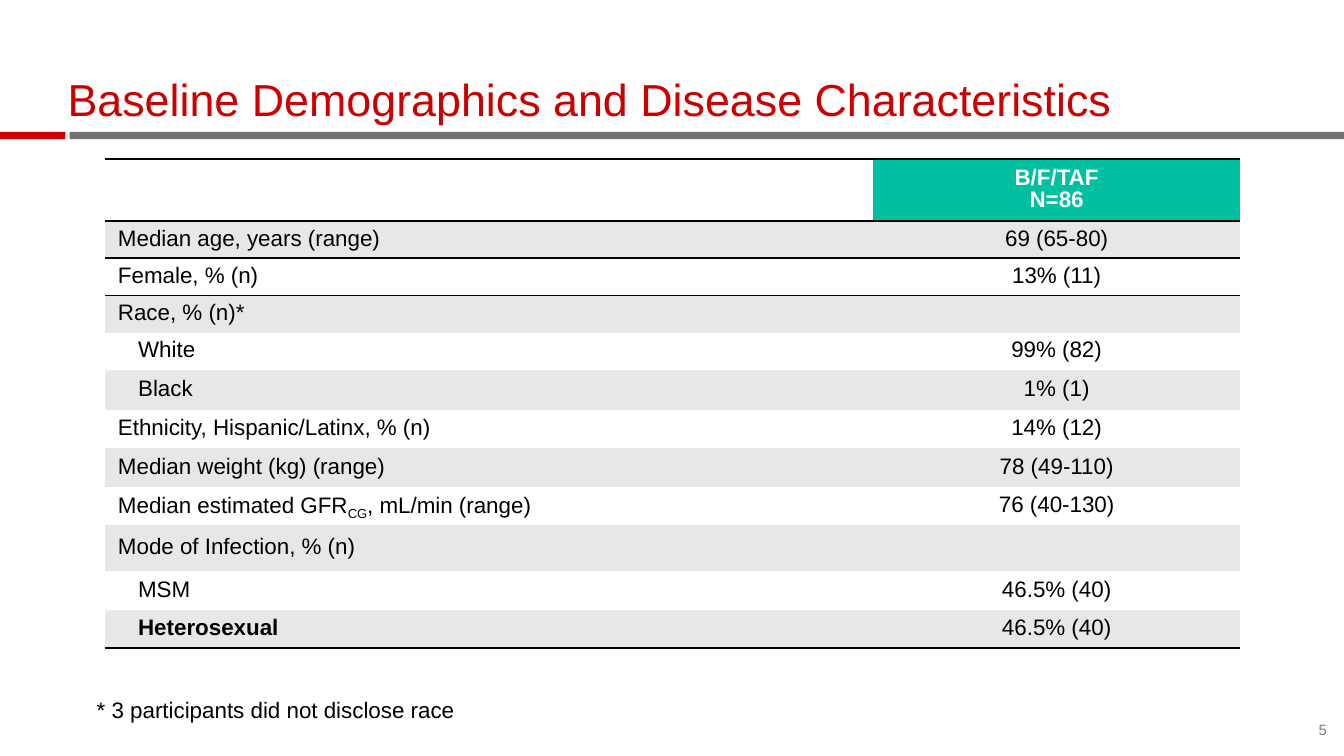
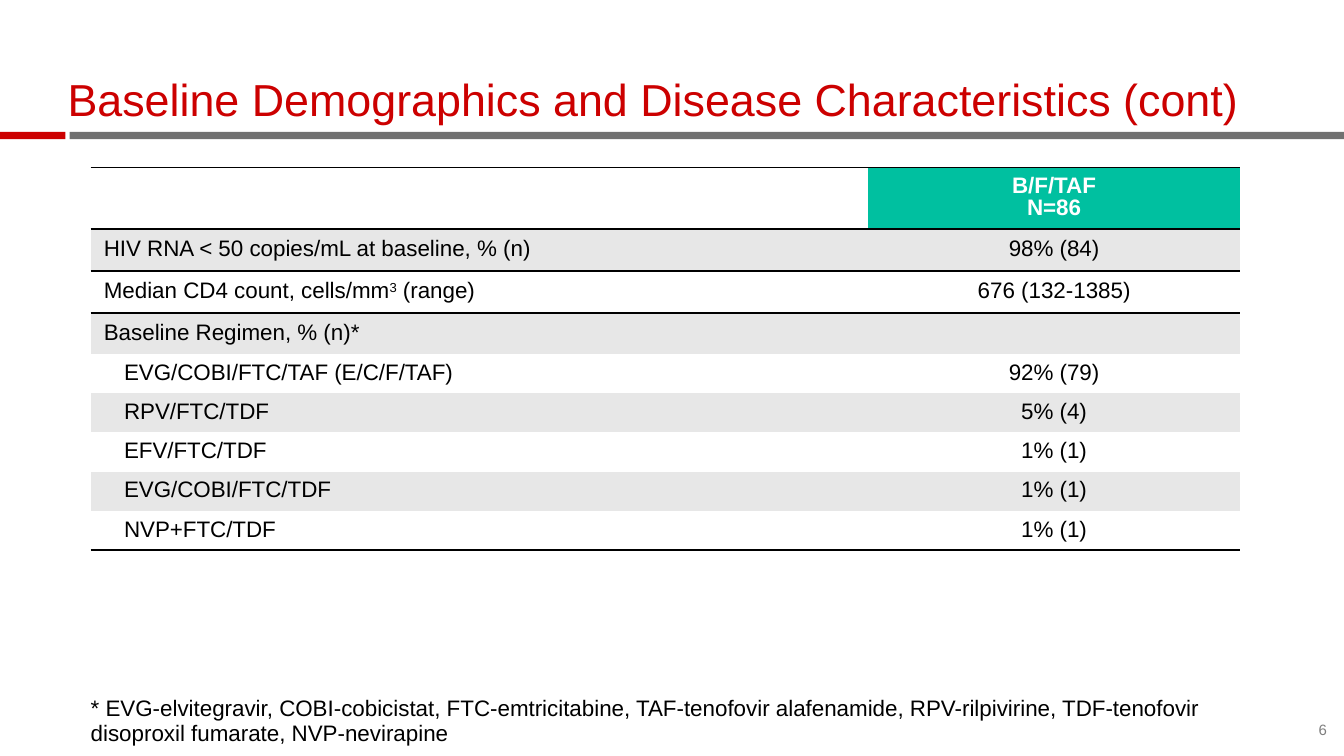
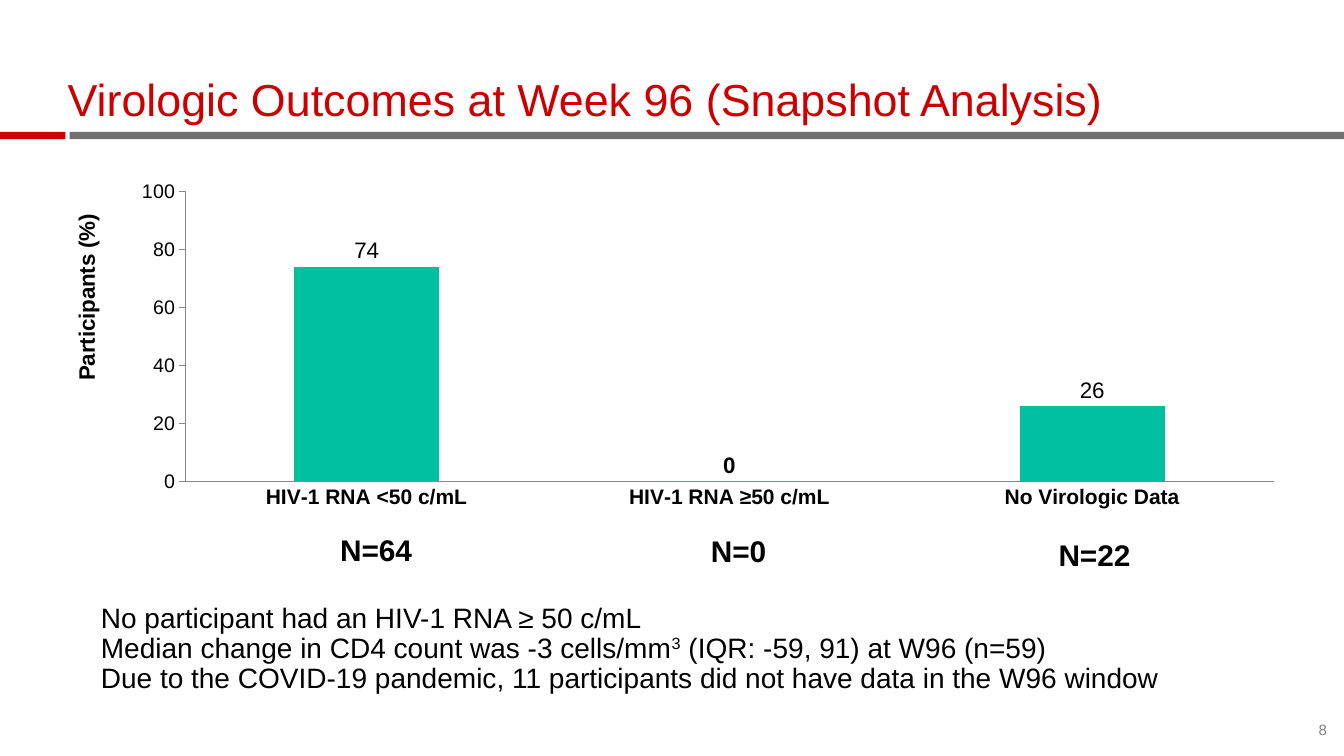
import pptx
import pptx.chart.data
import pptx.dml.color
import pptx.enum.chart
import pptx.enum.shapes
import pptx.enum.text
import pptx.oxml
import pptx.oxml.ns
import pptx.util

Inches, Pt, qn = pptx.util.Inches, pptx.util.Pt, pptx.oxml.ns.qn
ALIGN = pptx.enum.text.PP_ALIGN
ANCHOR = pptx.enum.text.MSO_ANCHOR
FONT = "Arial"
RED, GRAY, TEAL = "CC0000", "717171", "00C0A0"
BLACK, WHITE, BAND, AXIS, NUMBER = "000000", "FFFFFF", "E7E7E7", "878787", "7F7F7F"
NO_STYLE = "{2D5ABB26-0587-4C30-8999-92F81FD0307C}"


def rgb(color):
    return pptx.dml.color.RGBColor.from_string(color)


def write(tf, lines, size, color=BLACK, bold=False, align=ALIGN.LEFT, spacing=0.9):
    """Fill a text frame; text between bars is raised (digits) or lowered."""
    for i, line in enumerate(lines):
        p = tf.paragraphs[0] if i == 0 else tf.add_paragraph()
        for j, part in enumerate(line.split("|")):
            r = p.add_run()
            r.text = part
            if j % 2:
                r.font._element.set("baseline", "30000" if part.isdigit() else "-25000")
        p.alignment, p.line_spacing, p.space_before = align, spacing, Pt(0)
        p.font.name, p.font.size, p.font.bold = FONT, Pt(size), bold
        p.font.color.rgb = rgb(color)


prs = pptx.Presentation()
prs.slide_width, prs.slide_height = Inches(13.33), Inches(7.5)

# Slides: title, page number, layout index (5 title only, 1 title and body)
pages = [
    ("Baseline Demographics and Disease Characteristics", "5", 5),
    ("Baseline Demographics and Disease Characteristics (cont)", "6", 5),
    ("Virologic Outcomes at Week 96 (Snapshot Analysis)", "8", 1),
]
slides = [prs.slides.add_slide(prs.slide_layouts[layout]) for _, _, layout in pages]

# Master: title place and the two bands under it
master = prs.slide_master
title = master.placeholders[0]
title.left, title.top, title.width, title.height = map(Inches, (0.67, 0.51, 12, 0.74))
for left, width, color in [(0.69, 12.64, GRAY), (0, 0.65, RED)]:
    sp = slides[0].shapes.add_shape(pptx.enum.shapes.MSO_SHAPE.RECTANGLE,
                                    Inches(left), Inches(1.31), Inches(width), Inches(0.07))
    sp.shadow.inherit = False
    sp.fill.solid()
    sp.fill.fore_color.rgb = rgb(color)
    sp.line.fill.background()
    master.shapes.element.append(sp.element)

# Titles
for s, (heading, _, _) in zip(slides, pages):
    tf = s.shapes.title.text_frame
    tf.margin_left = tf.margin_right = tf.margin_top = tf.margin_bottom = 0
    tf.vertical_anchor = ANCHOR.BOTTOM
    tf.auto_size = pptx.enum.text.MSO_AUTO_SIZE.NONE
    write(tf, [heading], 32, RED)

# Tables: place, column widths, row heights, rules by row edge, rows
tables = [
    ((1.04, 1.58), (7.62, 3.64),
     [0.61] + [0.37] * 4 + [0.4] + [0.38] * 3 + [0.46] + [0.38] * 2,
     {0: 1.5, 1: 1.5, 2: 1, 12: 2},
     [("Median age, years (range)", "69 (65-80)", ""),
      ("Female, % (n)", "13% (11)", ""),
      ("Race, % (n)*", "", ""),
      ("White", "99% (82)", "indent"),
      ("Black", "1% (1)", "indent"),
      ("Ethnicity, Hispanic/Latinx, % (n)", "14% (12)", ""),
      ("Median weight (kg) (range)", "78 (49-110)", ""),
      ("Median estimated GFR|CG|, mL/min (range)", "76 (40-130)", ""),
      ("Mode of Infection, % (n)", "", ""),
      ("MSM", "46.5% (40)", "indent"),
      ("Heterosexual", "46.5% (40)", "indent bold")]),
    ((0.9, 1.66), (7.71, 3.69),
     [0.61] + [0.42] * 2 + [0.4] + [0.39] * 5,
     {0: 1, 1: 1.5, 2: 1.5, 9: 2},
     [("HIV RNA < 50 copies/mL at baseline, % (n)", "98% (84)", ""),
      ("Median CD4 count, cells/mm|3| (range)", "676 (132-1385)", ""),
      ("Baseline Regimen, % (n)*", "", ""),
      ("EVG/COBI/FTC/TAF (E/C/F/TAF)", "92% (79)", "indent"),
      ("RPV/FTC/TDF", "5% (4)", "indent"),
      ("EFV/FTC/TDF", "1% (1)", "indent"),
      ("EVG/COBI/FTC/TDF", "1% (1)", "indent"),
      ("NVP+FTC/TDF", "1% (1)", "indent")]),
]
for s, ((left, top), widths, heights, rules, rows) in zip(slides, tables):
    frame = s.shapes.add_table(len(heights), 2, Inches(left), Inches(top),
                               Inches(sum(widths)), Inches(sum(heights)))
    table = frame.table
    table._tbl.tblPr.find(qn("a:tableStyleId")).text = NO_STYLE
    for column, width in zip(table.columns, widths):
        column.width = Inches(width)
    for i, (label, value, look) in enumerate([("", "B/F/TAF\nN=86", "")] + rows):
        table.rows[i].height = Inches(heights[i])
        for j, text in enumerate((label, value)):
            cell = table.cell(i, j)
            cell.vertical_anchor = ANCHOR.MIDDLE
            cell.margin_left = Inches(0.33 if j == 0 and "indent" in look else 0.13)
            cell.margin_right = Inches(0.13)
            cell.margin_top = cell.margin_bottom = Inches(0.03)
            write(cell.text_frame, text.split("\n"), 16, BLACK if i else WHITE,
                  i == 0 or (j == 0 and "bold" in look), ALIGN.CENTER if j else ALIGN.LEFT)
            # Horizontal rules come before the fill in the cell properties
            for tag, edge in (("lnT", i), ("lnB", i + 1)):
                if edge in rules:
                    cell._tc.get_or_add_tcPr().append(pptx.oxml.parse_xml(
                        f'<a:{tag} {pptx.oxml.ns.nsdecls("a")} w="{int(Pt(rules[edge]))}">'
                        f'<a:solidFill><a:srgbClr val="{BLACK}"/></a:solidFill></a:{tag}>'))
            if i == 0 and j == 0:
                cell.fill.background()
            else:
                cell.fill.solid()
                cell.fill.fore_color.rgb = rgb(TEAL if i == 0 else BAND if i % 2 else WHITE)

# Chart
s = slides[2]
data = pptx.chart.data.CategoryChartData()
data.categories = ["HIV-1 RNA <50 c/mL", "HIV-1 RNA ≥50 c/mL", "No Virologic Data"]
data.add_series("Series 1", (74, 0, 26))
chart = s.shapes.add_chart(pptx.enum.chart.XL_CHART_TYPE.COLUMN_CLUSTERED, Inches(-0.09),
                           Inches(1.53), Inches(12.76), Inches(6.16), data).chart
chart.has_legend = chart.has_title = False
chart.font.name, chart.font.size = FONT, Pt(18)
chart.font.color.rgb = rgb(BLACK)
plot = chart.plots[0]
plot.gap_width, plot.vary_by_categories = 150, False
series = plot.series[0]
series.format.fill.solid()
series.format.fill.fore_color.rgb = rgb(TEAL)

# Data labels: only the zero is bold
labels = series.data_labels
labels.show_value = True
for label, bold in [(labels, True)] + [(series.points[i].data_label, False) for i in (0, 2)]:
    label.position = pptx.enum.chart.XL_LABEL_POSITION.OUTSIDE_END
    label.font.name, label.font.size, label.font.bold = FONT, Pt(16), bold
    label.font.color.rgb = rgb(BLACK)

# Axes
TICK = pptx.enum.chart.XL_TICK_MARK
for axis, size, bold, tick in [(chart.category_axis, 15, True, TICK.NONE),
                               (chart.value_axis, 14, False, TICK.OUTSIDE)]:
    axis.has_major_gridlines = False
    axis.major_tick_mark, axis.minor_tick_mark = tick, TICK.NONE
    axis.format.line.color.rgb = rgb(AXIS)
    font = axis.tick_labels.font
    font.name, font.size, font.bold = FONT, Pt(size), bold
    font.color.rgb = rgb(BLACK)
axis = chart.value_axis
axis.minimum_scale, axis.maximum_scale, axis.major_unit = 0, 100, 20
write(axis.axis_title.text_frame, ["Participants (%)"], 16, bold=True, spacing=1.0)

# Fixed places of the plot area and the axis title, as shares of the chart
plot_area = chart._chartSpace.chart.plotArea
for parent, index, target, place in [
        (plot_area, 0, '<c:layoutTarget val="inner"/>',
         {"x": 0.151, "y": 0.06, "w": 0.846, "h": 0.468}),
        (axis.axis_title._element, 1, "", {"x": 0.06, "y": 0.09})]:
    for old in parent.findall(qn("c:layout")):
        parent.remove(old)
    values = "".join(f'<c:{key} val="{value}"/>' for key, value in place.items())
    parent.insert(index, pptx.oxml.parse_xml(
        f'<c:layout {pptx.oxml.ns.nsdecls("c")}><c:manualLayout>{target}'
        f'<c:xMode val="edge"/><c:yMode val="edge"/>{values}</c:manualLayout></c:layout>'))

# Findings under the chart
body = s.placeholders[1]
body.left, body.top, body.width, body.height = map(Inches, (1, 5.99, 11.79, 0.91))
tf = body.text_frame
tf.margin_left = tf.margin_right = tf.margin_top = tf.margin_bottom = 0
tf.auto_size = pptx.enum.text.MSO_AUTO_SIZE.NONE
write(tf, ["No participant had an HIV-1 RNA ≥ 50 c/mL",
           "Median change in CD4 count was -3 cells/mm|3| (IQR: -59, 91) at W96 (n=59)",
           "Due to the COVID-19 pandemic, 11 participants did not have data in the W96 window"], 20)
for p in tf.paragraphs:
    pPr = p._p.get_or_add_pPr()
    pPr.set("marL", "0")
    pPr.set("indent", "0")
    pPr.find(qn("a:defRPr")).addprevious(
        pptx.oxml.parse_xml(f'<a:buNone {pptx.oxml.ns.nsdecls("a")}/>'))

# Text boxes: footnotes, group sizes, page numbers
footnote = (16, BLACK, False, ALIGN.LEFT, 0.9)
group = (21.3, BLACK, True, ALIGN.CENTER, 0.85)
number = (10.7, NUMBER, False, ALIGN.RIGHT, 1.0)
boxes = [
    (slides[0], (0.96, 6.94, 4, 0.24), "* 3 participants did not disclose race", footnote),
    (slides[1], (0.9, 6.92, 11.5, 0.48),
     "* EVG-elvitegravir, COBI-cobicistat, FTC-emtricitabine, TAF-tenofovir alafenamide, "
     "RPV-rilpivirine, TDF-tenofovir disoproxil fumarate, NVP-nevirapine", footnote),
    (s, (3.31, 5.33, 0.84, 0.31), "N=64", group),
    (s, (7.01, 5.34, 0.63, 0.31), "N=0", group),
    (s, (10.35, 5.38, 1.01, 0.31), "N=22", group),
]
boxes += [(page, (12.8, 7.15, 0.36, 0.18), no, number)
          for page, (_, no, _) in zip(slides, pages)]
for page, place, text, style in boxes:
    tf = page.shapes.add_textbox(*map(Inches, place)).text_frame
    tf.word_wrap = True
    tf.margin_left = tf.margin_right = tf.margin_top = tf.margin_bottom = 0
    tf.vertical_anchor = ANCHOR.BOTTOM if style is number else ANCHOR.TOP
    write(tf, [text], *style)

prs.save("out.pptx")
